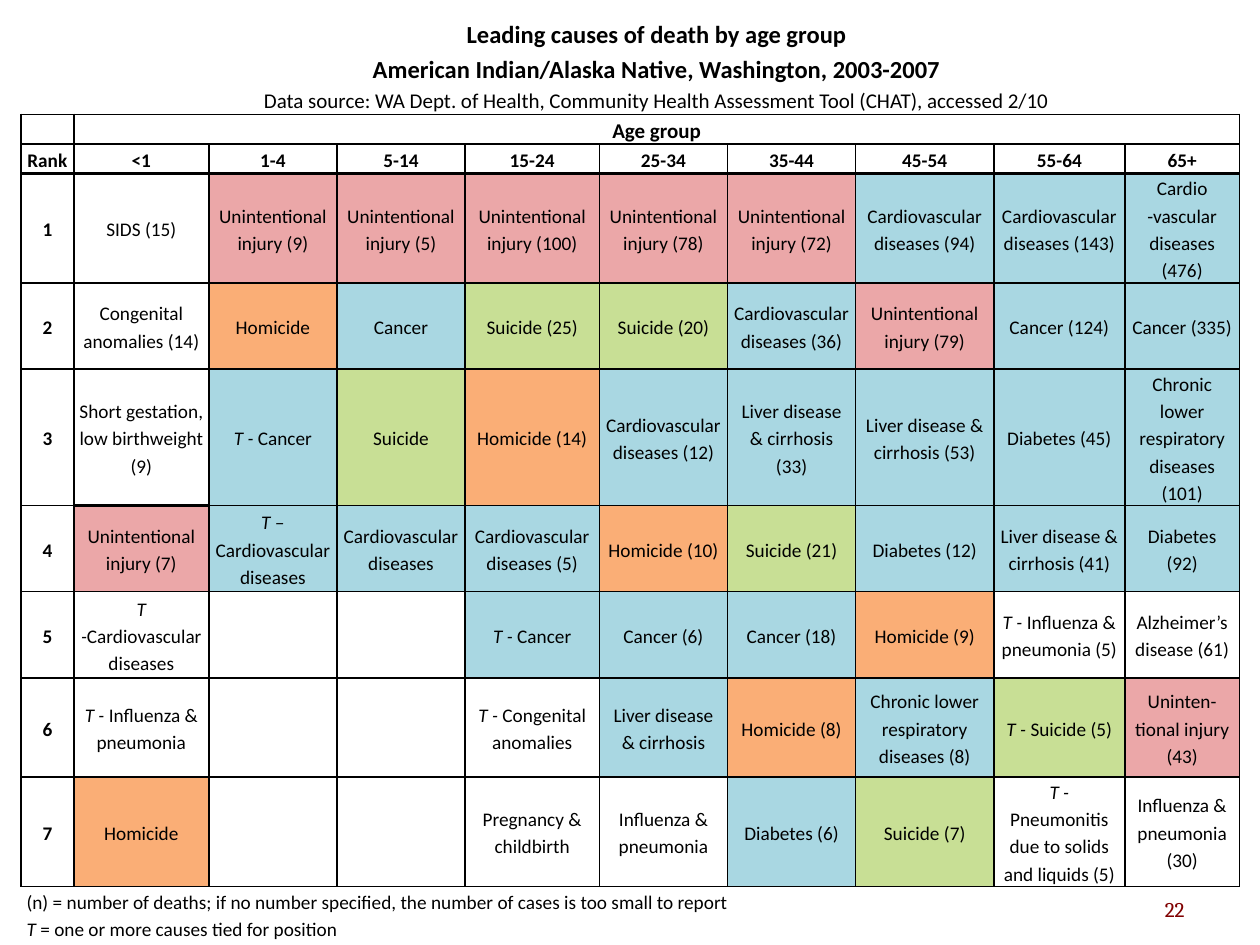
"""Build a slide that ranks the leading causes of death by age group."""
from typing import NamedTuple

from lxml import etree
from pptx import Presentation
from pptx import util as u
from pptx.dml import color
from pptx.enum import text as t
from pptx.oxml import ns

WIDTHS = [30.2, 77.2, 73.2, 73.2, 76.8, 73.2, 73.2, 79, 74.9, 65.5]
HEIGHTS = [56.2, 16.9, 16.9, 62.6, 49.2, 78, 49.2, 49.4, 56.6, 62.6, 31.8]
BLACK, RED, BLUE = "000000", "EBA7A8", "A9D7E2"
TONES = {
    "Uninten": RED, "Homicide": "FAAE76", "Suicide": "C8DF95",
    "Cardio": BLUE, "Cancer": BLUE, "Liver": BLUE, "Diabetes": BLUE, "Chronic": BLUE,
}
PLAIN = {(7, 1)}
HEAVY = {(3, 7), (5, 1), (7, 9)}
FIRST, LAST = 1, 9

AGES = ["Rank", "<1", "1-4", "5-14", "15-24", "25-34", "35-44", "45-54", "55-64", "65+"]
RANKS = [
    ["SIDS (15)", "Unintentional injury (9)", "Unintentional injury (5)",
     "Unintentional injury (100)", "Unintentional injury (78)", "Unintentional injury (72)",
     "Cardiovascular diseases (94)", "Cardiovascular diseases (143)",
     "Cardio -vascular diseases (476)"],
    ["Congenital anomalies (14)", "Homicide", "Cancer", "Suicide (25)", "Suicide (20)",
     "Cardiovascular diseases (36)", "Unintentional injury (79)", "Cancer (124)",
     "Cancer (335)"],
    ["Short gestation, low birthweight (9)", "T - |Cancer", "Suicide", "Homicide (14)",
     "Cardiovascular diseases (12)", "Liver disease & cirrhosis (33)",
     "Liver disease & cirrhosis (53)", "Diabetes (45)",
     "Chronic lower respiratory diseases (101)"],
    ["Unintentional injury (7)", "T –|Cardiovascular diseases", "Cardiovascular diseases",
     "Cardiovascular diseases (5)", "Homicide (10)", "Suicide (21)", "Diabetes (12)",
     "Liver disease & cirrhosis (41)", "Diabetes (92)"],
    ["T -|Cardiovascular diseases", "", "", "T - |Cancer", "Cancer (6)", "Cancer (18)",
     "Homicide (9)", "T -| Influenza & pneumonia (5)", "Alzheimer’s disease (61)"],
    ["T - |Influenza & pneumonia", "", "", "T -| Congenital anomalies",
     "Liver disease & cirrhosis", "Homicide (8)", "Chronic lower respiratory diseases (8)",
     "T -| Suicide (5)", "Uninten-\ntional injury (43)"],
    ["Homicide", "", "", "Pregnancy & childbirth", "Influenza & pneumonia", "Diabetes (6)",
     "Suicide (7)", "T - |Pneumonitis due to solids and liquids (5)",
     "Influenza & pneumonia (30)"],
]


class Line(NamedTuple):
    text: str
    size: float = 11
    bold: bool = False
    align: t.PP_ALIGN = t.PP_ALIGN.CENTER
    face: str = "Calibri"
    tint: str = BLACK
    space: float = 1.15


def hue(code: str) -> color.RGBColor:
    return color.RGBColor.from_string(code)


def write(frame, lines: list[Line]) -> None:
    for i, line in enumerate(lines):
        para = frame.add_paragraph() if i else frame.paragraphs[0]
        para.alignment, para.line_spacing = line.align, line.space
        font = para.font
        font.size, font.bold, font.name = u.Pt(line.size), line.bold, line.face
        font.color.rgb = hue(line.tint)
        mark, bar, rest = line.text.rpartition("|")
        if mark:
            run = para.add_run()
            run.text, run.font.italic = mark, True
        if rest:
            para.add_run().text = rest


def weigh(row: int, col: int, side: str) -> float:
    """Return the border width of one side of a cell, zero for none."""
    if side == "T" and row:
        return weigh(row - 1, col, "B")
    if side == "L" and col:
        return weigh(row, col - 1, "R")
    if side == "B" and row < FIRST:
        return 1
    if not FIRST <= row <= LAST:
        return 0
    thick = (side == "R" and col == 0 and row != 6) or (
        side == "B" and (row == 2 or (row, col) in HEAVY))
    return 1.5 if thick else 1


def edge(cell, row: int, col: int) -> None:
    props = cell._tc.get_or_add_tcPr()
    for side in "LRTB":
        width = weigh(row, col, side)
        line = etree.SubElement(props, ns.qn(f"a:ln{side}"), w=str(u.Pt(width)))
        if width:
            fill = etree.SubElement(line, ns.qn("a:solidFill"))
            etree.SubElement(fill, ns.qn("a:srgbClr"), val=BLACK)
        else:
            etree.SubElement(line, ns.qn("a:noFill"))


def shade(cell, words: str, plain: bool) -> None:
    tone = next((tone for key, tone in TONES.items() if key in words), None)
    if tone and not plain:
        cell.fill.solid()
        cell.fill.fore_color.rgb = hue(tone)
    else:
        cell.fill.background()


def list_rows() -> list[list[list[Line]]]:
    title = [
        Line("Leading causes of death by age group", 14, True),
        Line("American Indian/Alaska Native, Washington, 2003-2007", 14, True),
        Line("Data source: WA Dept. of Health, Community Health Assessment Tool (CHAT), "
             "accessed 2/10", 12),
    ]
    notes = [Line(words, align=t.PP_ALIGN.LEFT) for words in (
        "(n) = number of deaths; if no number specified, "
        "the number of cases is too small to report",
        "T| = one or more causes tied for position")]
    rows = [[[Line("")], title], [[Line("")], [Line("Age group", 12, True)]],
            [[Line(age, bold=True)] for age in AGES]]
    for rank, causes in enumerate(RANKS, 1):
        rows.append([[Line(str(rank), bold=True)]]
                    + [[Line(part) for part in cause.split("\n")] for cause in causes])
    return rows + [[notes]]


def draw_grid(slide) -> None:
    grid = slide.shapes.add_table(len(HEIGHTS), len(WIDTHS), u.Pt(12), u.Pt(9.2),
                                  u.Pt(sum(WIDTHS)), u.Pt(sum(HEIGHTS))).table
    grid.first_row = grid.horz_banding = False
    for col, width in zip(grid.columns, WIDTHS):
        col.width = u.Pt(width)
    for row, high in zip(grid.rows, HEIGHTS):
        row.height = u.Pt(high)
    for row, start in ((0, 1), (1, 1), (10, 0)):
        grid.cell(row, start).merge(grid.cell(row, 9))
    for r, row in enumerate(list_rows()):
        for c in range(len(WIDTHS)):
            cell = grid.cell(r, c)
            lines = row[c] if c < len(row) else [Line("")]
            cell.margin_left = cell.margin_right = u.Pt(3.2)
            cell.margin_top = cell.margin_bottom = u.Pt(0)
            cell.vertical_anchor = t.MSO_ANCHOR.MIDDLE if r > 1 else t.MSO_ANCHOR.TOP
            edge(cell, r, c)
            shade(cell, lines[0].text, (r, c) in PLAIN)
            write(cell.text_frame, lines)


def main() -> None:
    deck = Presentation()
    deck.slide_width, deck.slide_height = u.Pt(720), u.Pt(540)
    slide = deck.slides.add_slide(deck.slide_layouts[6])
    page = slide.shapes.add_textbox(u.Pt(516.2), u.Pt(509), u.Pt(167.8), u.Pt(31))
    page.text_frame.word_wrap = True
    write(page.text_frame, [Line("22", 12, align=t.PP_ALIGN.RIGHT, face="Cambria",
                                 tint="800000", space=1.0)])
    draw_grid(slide)
    deck.save("out.pptx")


if __name__ == "__main__":
    main()
